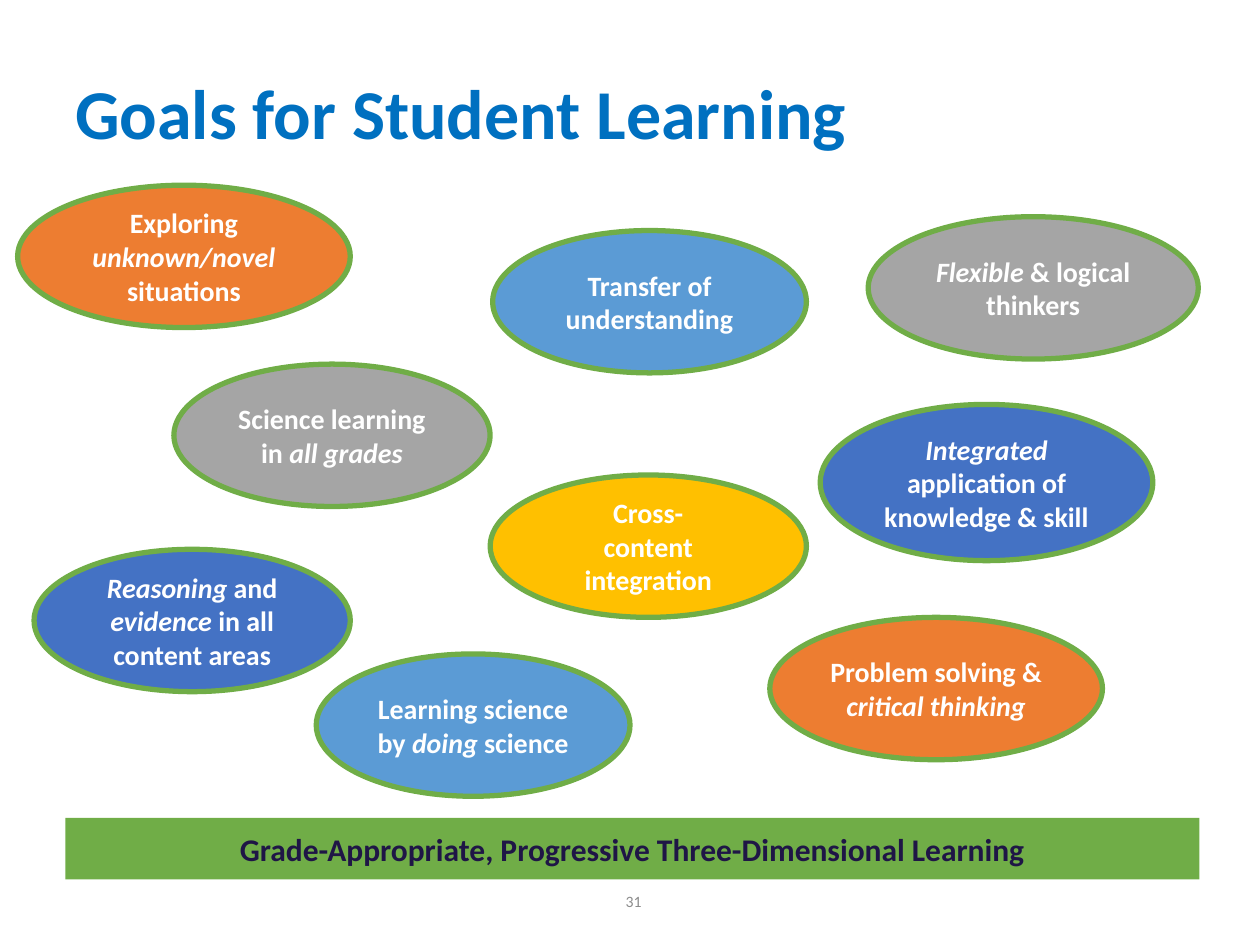
from pptx import Presentation
from pptx.dml.color import RGBColor
from pptx.enum import shapes, text
from pptx.util import Inches, Pt

FONT = "Calibri"
WHITE, GREEN = "FFFFFF", "70AD47"
ORANGE, GREY, NAVY, GOLD, BLUE = "ED7D31", "A5A5A5", "4472C4", "FFC000", "5B9BD5"

# left, top, width, height, fill, wording with *italic* parts
GOALS = [
    (0.14, 1.47, 2.64, 1.13, ORANGE, "Exploring *unknown/novel* situations"),
    (1.38, 2.89, 2.51, 1.13, GREY, "Science learning in *all grades*"),
    (0.27, 4.36, 2.51, 1.13, NAVY, "*Reasoning* and *evidence* in all content areas"),
    (3.89, 3.77, 2.51, 1.13, GOLD, "Cross-\ncontent integration"),
    (3.91, 1.83, 2.49, 1.13, BLUE, "Transfer of understanding"),
    (2.51, 5.19, 2.49, 1.13, BLUE, "Learning science by *doing* science"),
    (6.11, 4.9, 2.64, 1.13, ORANGE, "Problem solving & *critical thinking*"),
    (6.51, 3.21, 2.64, 1.24, NAVY, "*Integrated* application of knowledge & skill"),
    (6.89, 1.72, 2.62, 1.13, GREY, "*Flexible* & logical thinkers"),
]


def color(value):
    return RGBColor.from_string(value)


def write(frame, words, size, ink, align, bold=True):
    """Fill a frame, one paragraph a line, with *starred* parts in italics."""
    frame.word_wrap = True
    frame.vertical_anchor = text.MSO_ANCHOR.MIDDLE
    for row, line in enumerate(words.split("\n")):
        para = frame.add_paragraph() if row else frame.paragraphs[0]
        para.alignment = align
        for part, piece in enumerate(line.split("*")):
            if not piece:
                continue
            run = para.add_run()
            run.text = piece
            font = run.font
            font.name, font.size, font.bold = FONT, Pt(size), bold
            font.italic = part % 2 == 1
            font.color.rgb = color(ink)


def add_label(slide, box, words, size, ink, align, bold=True):
    label = slide.shapes.add_textbox(*map(Inches, box))
    write(label.text_frame, words, size, ink, align, bold)
    return label


def add_block(slide, kind, box, fill, words, size, ink, edge=None):
    block = slide.shapes.add_shape(kind, *map(Inches, box))
    block.shadow.inherit = False
    block.fill.solid()
    block.fill.fore_color.rgb = color(fill)
    if edge:
        block.line.color.rgb = color(edge)
        block.line.width = Pt(3)
    else:
        block.line.fill.background()
    frame = block.text_frame
    frame.margin_left = frame.margin_right = Inches(0.07)
    frame.margin_top = frame.margin_bottom = Inches(0.04)
    write(frame, words, size, ink, text.PP_ALIGN.CENTER)


def main():
    deck = Presentation()
    deck.slide_width, deck.slide_height = Inches(10), Inches(7.5)
    slide = deck.slides.add_slide(deck.slide_layouts[6])
    kinds, align = shapes.MSO_SHAPE, text.PP_ALIGN

    add_label(slide, (2.94, 6.95, 2.25, 0.4), "31", 9, "8C8C8C", align.RIGHT, bold=False)
    for *box, fill, words in GOALS:
        add_block(slide, kinds.OVAL, box, fill, words, 16, WHITE, GREEN)
    add_block(slide, kinds.RECTANGLE, (0.52, 6.49, 9, 0.49), GREEN,
              "Grade-Appropriate, Progressive Three-Dimensional Learning", 18, "1F1646")
    title = add_label(slide, (0.5, 0.3, 9, 1.25), "Goals for Student Learning",
                      40, "0070C0", align.LEFT)
    title.text_frame.paragraphs[0].line_spacing = 0.9

    deck.save("out.pptx")


if __name__ == "__main__":
    main()
